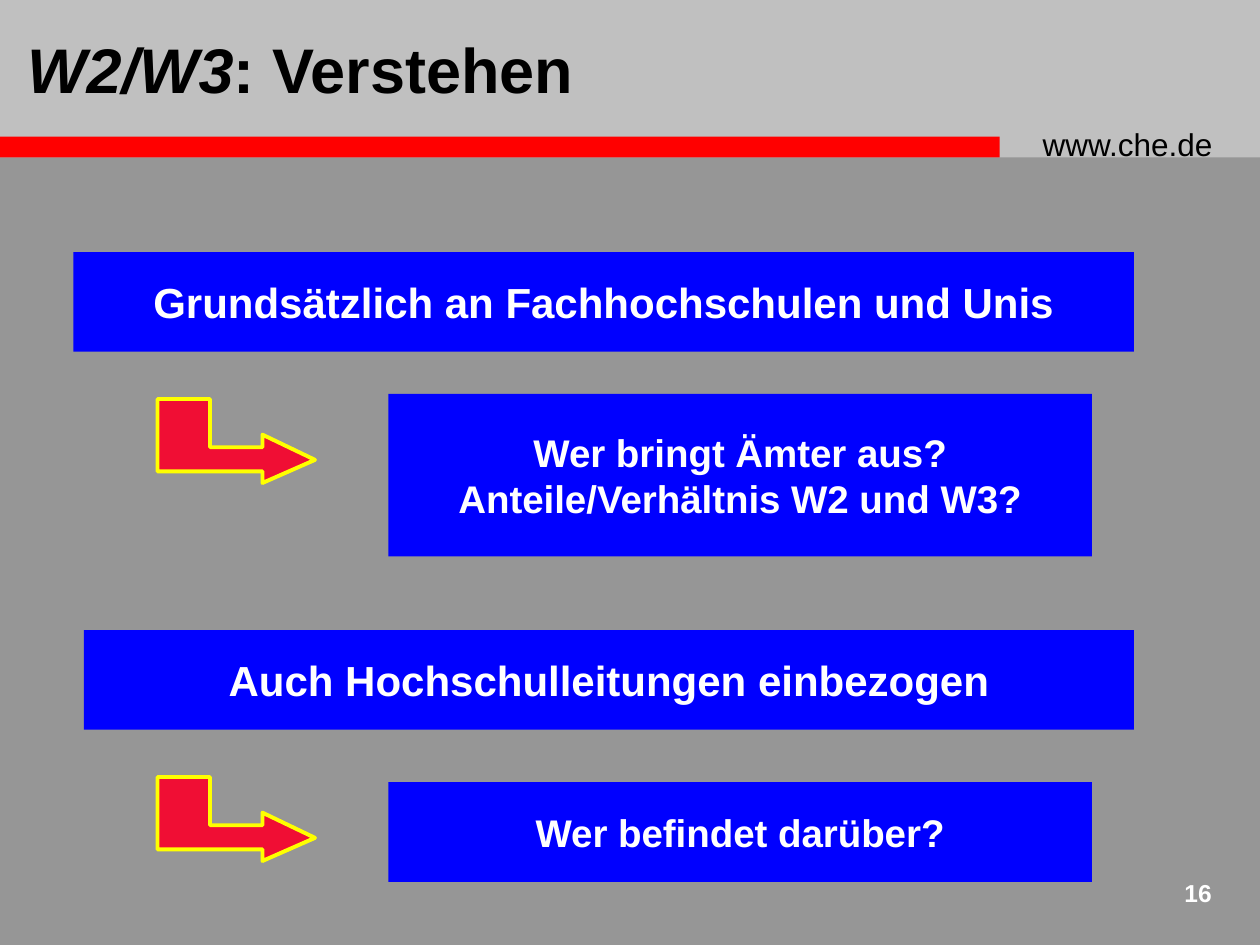
"""Build the slide 'W2/W3: Verstehen' on a grid of 120 columns by 90 rows."""
from dataclasses import dataclass
from typing import Optional

from lxml.etree import SubElement
from pptx import Presentation
from pptx.dml.color import RGBColor as RGB
from pptx.enum.shapes import MSO_SHAPE as SHAPE
from pptx.enum.text import MSO_ANCHOR as ANCHOR, PP_ALIGN as ALIGN
from pptx.oxml.ns import qn
from pptx.util import Inches, Pt

COLS, ROWS = 120, 90


@dataclass(frozen=True)
class Theme:
    font: str = "Arial"
    back: str = "969696"
    banner: str = "C0C0C0"
    stripe: str = "FF0000"
    box: str = "0000FF"
    arrow: str = "F00E34"
    edge: str = "FFFF00"
    dark: str = "000000"
    light: str = "FFFFFF"
    title: int = 36
    statement: int = 24
    question: int = 22
    url: int = 18
    number: int = 14


@dataclass(frozen=True)
class Area:
    col: float
    row: float
    cols: float
    rows: float


@dataclass(frozen=True)
class Run:
    text: str
    italic: bool = False


@dataclass(frozen=True)
class Style:
    size: int
    color: str
    bold: bool = True
    align: ALIGN = ALIGN.LEFT
    anchor: ANCHOR = ANCHOR.MIDDLE
    wrap: bool = True


@dataclass(frozen=True)
class Box:
    area: Area
    lines: tuple
    size: int


THEME = Theme()
BOXES = (
    Box(Area(7, 24, 101, 9.5), ("Grundsätzlich an Fachhochschulen und Unis",), THEME.statement),
    Box(Area(37, 37.5, 67, 15.5),
        ("Wer bringt Ämter aus?", "Anteile/Verhältnis W2 und W3?"), THEME.question),
    Box(Area(8, 60, 100, 9.5), ("Auch Hochschulleitungen einbezogen",), THEME.statement),
    Box(Area(37, 74.5, 67, 9.5), ("Wer befindet darüber?",), THEME.question),
)
ARROW_COL, ARROW_ROWS = 15, (38, 74)
ARROW = ((15, 5.8), (10, 3.4), (10, 4.6), (5, 4.6), (5, 0),
         (0, 0), (0, 6.9), (10, 6.9), (10, 8))


def x(col: float) -> int:
    """Return the length of a number of columns."""
    return Inches(10 * col / COLS)


def y(row: float) -> int:
    """Return the length of a number of rows."""
    return Inches(7.5 * row / ROWS)


def place(area: Area) -> tuple:
    """Return left, top, width and height of a grid area."""
    return x(area.col), y(area.row), x(area.cols), y(area.rows)


def paint(s, fill: str, edge: Optional[str] = None) -> None:
    """Fill a shape flat and give it an outline if asked."""
    s.shadow.inherit = False
    s.fill.solid()
    s.fill.fore_color.rgb = RGB.from_string(fill)
    if edge is None:
        s.line.fill.background()
        return
    s.line.color.rgb = RGB.from_string(edge)
    s.line.width = Pt(2.25)
    SubElement(s.line._get_or_add_ln(), qn("a:round"))


def write(s, lines: tuple, style: Style) -> None:
    """Write lines of runs into a shape."""
    tf = s.text_frame
    margins = dict.fromkeys(
        ("margin_left", "margin_top", "margin_right", "margin_bottom"), Inches(0.05))
    frame = {"word_wrap": style.wrap, "vertical_anchor": style.anchor, **margins}
    for name, value in frame.items():
        setattr(tf, name, value)
    for i, runs in enumerate(lines):
        p = tf.paragraphs[0] if i == 0 else tf.add_paragraph()
        p.alignment = style.align
        for run in runs:
            r = p.add_run()
            r.text = run.text
            look = {"name": THEME.font, "size": Pt(style.size),
                    "bold": style.bold, "italic": run.italic}
            for name, value in look.items():
                setattr(r.font, name, value)
            r.font.color.rgb = RGB.from_string(style.color)


def add_rect(shapes, area: Area, fill: str):
    """Add a plain rectangle."""
    s = shapes.add_shape(SHAPE.RECTANGLE, *place(area))
    paint(s, fill)
    return s


def add_text(shapes, area: Area, runs: tuple, style: Style) -> None:
    """Add a text box with one line."""
    write(shapes.add_textbox(*place(area)), (runs,), style)


def add_box(shapes, box: Box) -> None:
    """Add a filled box with centred text."""
    s = add_rect(shapes, box.area, THEME.box)
    lines = tuple((Run(line),) for line in box.lines)
    write(s, lines, Style(box.size, THEME.light, align=ALIGN.CENTER))


def add_arrow(shapes, row: float) -> None:
    """Add a bent arrow whose top left corner is on the given row."""
    points = [(x(ARROW_COL + c), y(row + r)) for c, r in ARROW]
    builder = shapes.build_freeform(*points[0])
    builder.add_line_segments(points[1:], close=True)
    paint(builder.convert_to_shape(), THEME.arrow, THEME.edge)


def main() -> None:
    """Build and save the slide."""
    prs = Presentation()
    prs.slide_width, prs.slide_height = x(COLS), y(ROWS)
    slide = prs.slides.add_slide(prs.slide_layouts[6])
    slide.background.fill.solid()
    slide.background.fill.fore_color.rgb = RGB.from_string(THEME.back)
    shapes = slide.shapes

    add_rect(shapes, Area(0, 0, COLS, 15), THEME.banner)
    add_rect(shapes, Area(0, 13, 95.2, 2), THEME.stripe)
    add_text(shapes, Area(98.7, 11.3, 19.8, 4.6), (Run("www.che.de"),),
             Style(THEME.url, THEME.dark, bold=False, anchor=ANCHOR.TOP))
    add_text(shapes, Area(112, 83, 4, 3.9), (Run("16"),),
             Style(THEME.number, THEME.light, align=ALIGN.RIGHT, anchor=ANCHOR.TOP, wrap=False))
    add_text(shapes, Area(2, 0, 97, 13), (Run("W2/W3", italic=True), Run(": Verstehen")),
             Style(THEME.title, THEME.dark))
    for box in BOXES:
        add_box(shapes, box)
    for row in ARROW_ROWS:
        add_arrow(shapes, row)
    prs.save("out.pptx")


if __name__ == "__main__":
    main()
